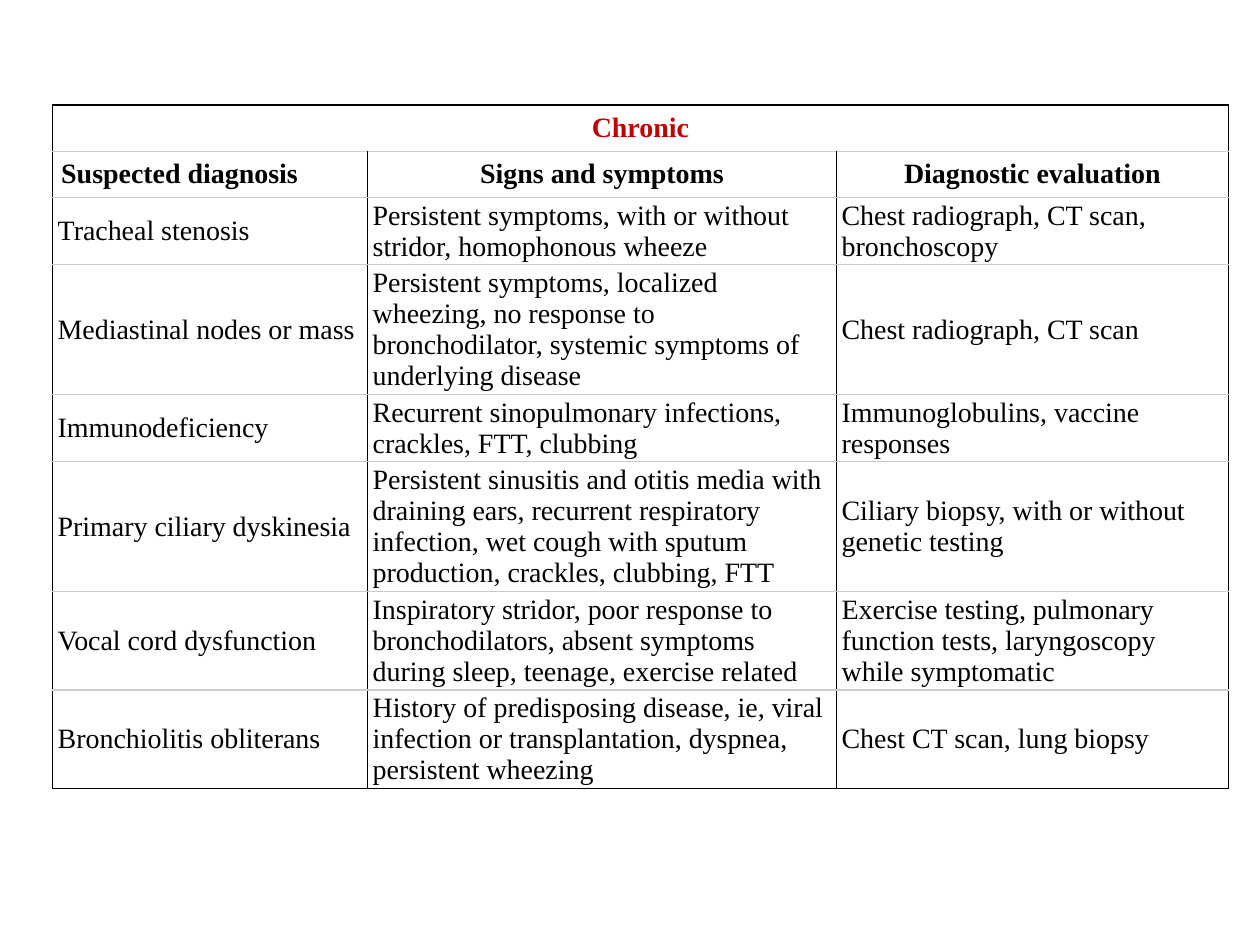
from dataclasses import dataclass

from pptx import Presentation
from pptx.dml.color import RGBColor
from pptx.enum.text import MSO_ANCHOR, PP_ALIGN
from pptx.oxml.ns import qn
from pptx.util import Pt
from lxml import etree

MIDDLE = MSO_ANCHOR.MIDDLE
LEFT, CENTER = PP_ALIGN.LEFT, PP_ALIGN.CENTER


@dataclass(frozen=True)
class Theme:
    font: str = "Times New Roman"
    size: float = 16
    border_width: float = 0.75
    ink: str = "000000"
    accent: str = "C00000"
    rule: str = "CCCCCC"
    paper: str = "FFFFFF"


THEME = Theme()
TABLE_LEFT, TABLE_TOP = 30, 60
COLUMN_WIDTHS = (180, 268, 224)
HEADING_HEIGHT = 26.4
LINE_HEIGHT = 17.7
HEADING_INSETS = (5, 2.5)
BODY_INSETS = (3, 1.5)

CATEGORY = "Chronic"
HEADINGS = ("Suspected diagnosis", "Signs and symptoms", "Diagnostic evaluation")
DIAGNOSES = [
    (2, "Tracheal stenosis",
     "Persistent symptoms, with or without stridor, homophonous wheeze",
     "Chest radiograph, CT scan, bronchoscopy"),
    (4, "Mediastinal nodes or mass",
     "Persistent symptoms, localized wheezing, no response to bronchodilator, "
     "systemic symptoms of underlying disease",
     "Chest radiograph, CT scan"),
    (2, "Immunodeficiency",
     "Recurrent sinopulmonary infections, crackles, FTT, clubbing",
     "Immunoglobulins, vaccine responses"),
    (4, "Primary ciliary dyskinesia",
     "Persistent sinusitis and otitis media with draining ears, recurrent "
     "respiratory infection, wet cough with sputum production, crackles, "
     "clubbing, FTT",
     "Ciliary biopsy, with or without genetic testing"),
    (3, "Vocal cord dysfunction",
     "Inspiratory stridor, poor response to bronchodilators, absent symptoms "
     "during sleep, teenage, exercise related",
     "Exercise testing, pulmonary function tests, laryngoscopy while symptomatic"),
    (3, "Bronchiolitis obliterans",
     "History of predisposing disease, ie, viral infection or transplantation, "
     "dyspnea, persistent wheezing",
     "Chest CT scan, lung biopsy"),
]


def set_borders(cell, top, bottom):
    properties = cell._tc.get_or_add_tcPr()
    sides = {"a:lnL": THEME.ink, "a:lnR": THEME.ink, "a:lnT": top, "a:lnB": bottom}
    for side, color in sides.items():
        line = etree.SubElement(properties, qn(side), w=str(Pt(THEME.border_width)))
        fill = etree.SubElement(line, qn("a:solidFill"))
        etree.SubElement(fill, qn("a:srgbClr"), val=color)


def paint_grid(table):
    last_row = len(table.rows) - 1
    for index, row in enumerate(table.rows):
        top = THEME.ink if index == 0 else THEME.rule
        bottom = THEME.ink if index == last_row else THEME.rule
        for cell in row.cells:
            set_borders(cell, top, bottom)
            cell.fill.solid()
            cell.fill.fore_color.rgb = RGBColor.from_string(THEME.paper)


def write_cell(cell, text, insets=BODY_INSETS, align=LEFT, bold=False, color=THEME.ink):
    cell.vertical_anchor = MIDDLE
    cell.margin_left = cell.margin_right = Pt(insets[0])
    cell.margin_top = cell.margin_bottom = Pt(insets[1])
    cell.text = text
    paragraph = cell.text_frame.paragraphs[0]
    paragraph.alignment = align
    font = paragraph.font
    font.name, font.size, font.bold = THEME.font, Pt(THEME.size), bold
    font.color.rgb = RGBColor.from_string(color)


def add_diagnosis_table(slide):
    heights = [HEADING_HEIGHT] * 2
    heights += [lines * LINE_HEIGHT + 2 * BODY_INSETS[1] for lines, *_ in DIAGNOSES]
    table = slide.shapes.add_table(
        len(heights), len(COLUMN_WIDTHS), Pt(TABLE_LEFT), Pt(TABLE_TOP),
        Pt(sum(COLUMN_WIDTHS)), Pt(sum(heights))).table
    table.first_row = table.horz_banding = False
    for column, width in zip(table.columns, COLUMN_WIDTHS):
        column.width = Pt(width)
    for row, height in zip(table.rows, heights):
        row.height = Pt(height)
    paint_grid(table)

    category_cell = table.cell(0, 0)
    category_cell.merge(table.cell(0, len(COLUMN_WIDTHS) - 1))
    write_cell(category_cell, CATEGORY, align=CENTER, bold=True, color=THEME.accent)
    for index, heading in enumerate(HEADINGS):
        write_cell(table.cell(1, index), heading, HEADING_INSETS,
                   CENTER if index else LEFT, bold=True)
    for row_index, (_, *entries) in enumerate(DIAGNOSES, start=2):
        for column_index, entry in enumerate(entries):
            write_cell(table.cell(row_index, column_index), entry)


def main():
    presentation = Presentation()
    presentation.slide_width, presentation.slide_height = Pt(720), Pt(540)
    slide = presentation.slides.add_slide(presentation.slide_layouts[6])
    add_diagnosis_table(slide)
    presentation.save("out.pptx")


if __name__ == "__main__":
    main()
